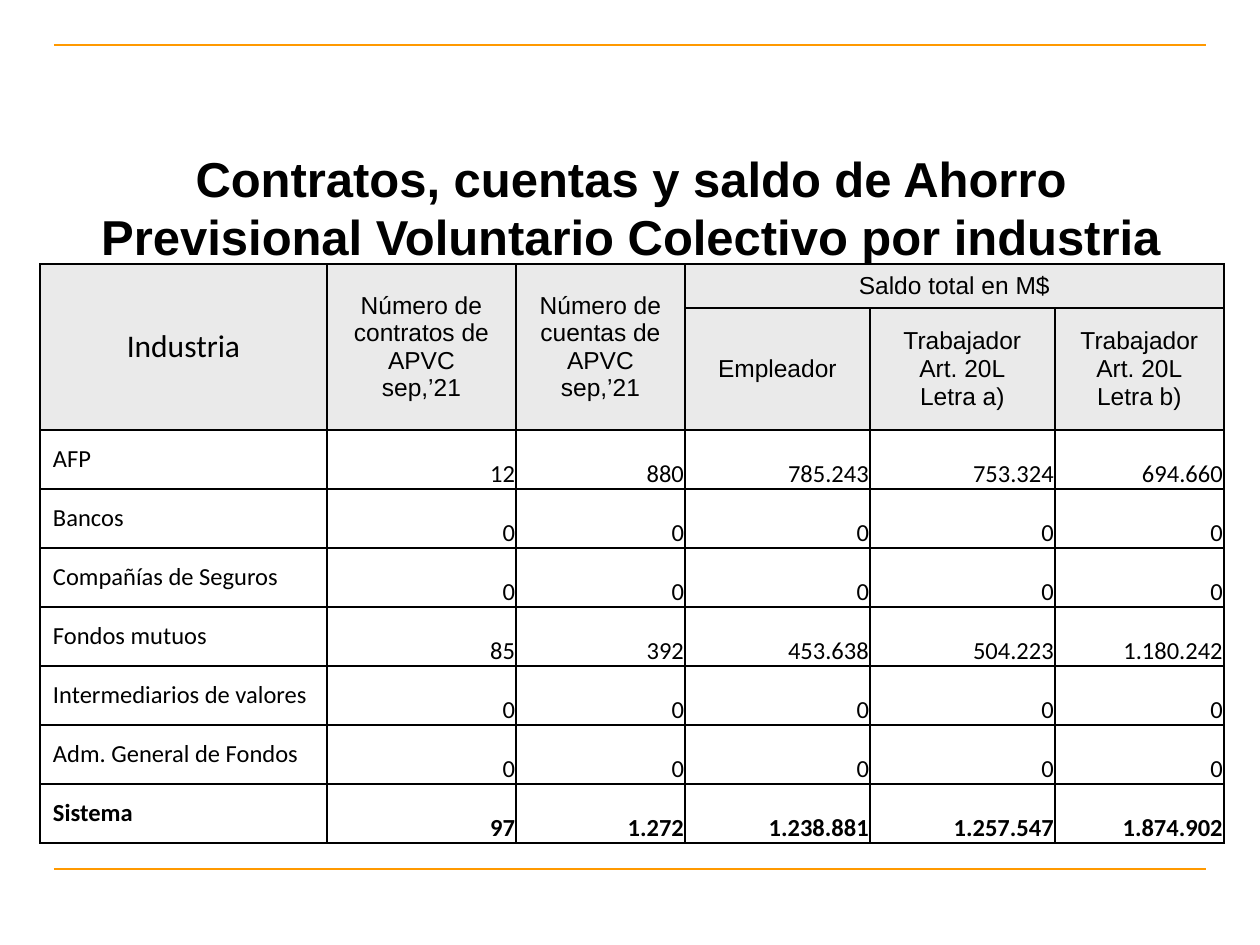
"""Builds the slide on collective pension savings by industry."""
import pptx
import pptx.util
import pptx.dml.color
import pptx.enum.shapes
import pptx.enum.text
import pptx.oxml.ns
import lxml.etree

PX = 914400 / 126
Color = pptx.dml.color.RGBColor.from_string
Align = pptx.enum.text.PP_ALIGN
Anchor = pptx.enum.text.MSO_ANCHOR
qn = pptx.oxml.ns.qn

theme = {
    "ink": "000000", "rule": "FF9900", "head": "EAEAEA", "body": "FFFFFF",
    "sans": "Arial", "text": "Calibri",
    "title": 28, "lead": 18, "cell": 14, "thin": 0.75, "edge": 1,
}


def px(*nums):
    return [pptx.util.Emu(round(n * PX)) for n in nums]


def write(frame, lines, face, size, align, bold=False):
    for i, line in enumerate(lines):
        para = frame.paragraphs[0] if i == 0 else frame.add_paragraph()
        para.alignment = align
        run = para.add_run()
        run.text = line
        run.font.name = face
        run.font.size = pptx.util.Pt(size)
        run.font.bold = bold
        run.font.color.rgb = Color(theme["ink"])


deck = pptx.Presentation()
deck.slide_width, deck.slide_height = px(1260, 945)
slide = deck.slides.add_slide(deck.slide_layouts[5])

for y in (45, 869):
    rule = slide.shapes.add_connector(
        pptx.enum.shapes.MSO_CONNECTOR.STRAIGHT, *px(54, y, 1206, y))
    rule.line.color.rgb = Color(theme["rule"])
    rule.line.width = pptx.util.Pt(theme["thin"])
    lxml.etree.SubElement(rule._element.spPr, qn("a:effectLst"))

title = slide.shapes.title
title.left, title.top, title.width, title.height = px(64, 146, 1134, 158)
frame = title.text_frame
frame.word_wrap = True
frame.auto_size = pptx.enum.text.MSO_AUTO_SIZE.NONE
frame.vertical_anchor = Anchor.MIDDLE
frame.margin_top, frame.margin_bottom = px(6, 42)
write(frame, ["Contratos, cuentas y saldo de Ahorro Previsional Voluntario "
              "Colectivo por industria"],
      theme["sans"], theme["title"], Align.CENTER, True)

cols = [287, 189, 169, 185, 185, 169]
rows = [44, 105] + [59] * 7
grid = slide.shapes.add_table(
    len(rows), len(cols), *px(40, 264, sum(cols), sum(rows))).table
grid.first_row = grid.horz_banding = False
for col, wide in zip(grid.columns, px(*cols)):
    col.width = wide
for row, high in zip(grid.rows, px(*rows)):
    row.height = high

for r in range(len(rows)):
    for c in range(len(cols)):
        cell = grid.cell(r, c)
        props = cell._tc.get_or_add_tcPr()
        for side in ("a:lnL", "a:lnR", "a:lnT", "a:lnB"):
            edge = lxml.etree.SubElement(
                props, qn(side), w=str(pptx.util.Pt(theme["edge"])))
            fill = lxml.etree.SubElement(edge, qn("a:solidFill"))
            lxml.etree.SubElement(fill, qn("a:srgbClr"), val=theme["ink"])
        cell.fill.solid()
        cell.fill.fore_color.rgb = Color(theme["head" if r < 2 else "body"])
        number = r > 1 and c > 0
        cell.vertical_anchor = Anchor.BOTTOM if number else Anchor.MIDDLE
        pads = px(1, 1, 1, 0) if number else px(13, 6, 13, 6)
        (cell.margin_left, cell.margin_top,
         cell.margin_right, cell.margin_bottom) = pads

for c in range(3):
    grid.cell(0, c).merge(grid.cell(1, c))
grid.cell(0, 3).merge(grid.cell(0, 5))

heads = [
    (0, 1, ["Número de contratos de APVC", "sep,’21"]),
    (0, 2, ["Número de cuentas de APVC", "sep,’21"]),
    (0, 3, ["Saldo total en M$"]),
    (1, 3, ["Empleador"]),
    (1, 4, ["Trabajador", "Art. 20L", "Letra a)"]),
    (1, 5, ["Trabajador", "Art. 20L", "Letra b)"]),
]
write(grid.cell(0, 0).text_frame, ["Industria"],
      theme["text"], theme["lead"], Align.CENTER)
for r, c, lines in heads:
    write(grid.cell(r, c).text_frame, lines,
          theme["sans"], theme["cell"], Align.CENTER)

none = ["0"] * 5
data = [
    ["AFP", "12", "880", "785.243", "753.324", "694.660"],
    ["Bancos", *none],
    ["Compañías de Seguros", *none],
    ["Fondos mutuos", "85", "392", "453.638", "504.223", "1.180.242"],
    ["Intermediarios de valores", *none],
    ["Adm. General de Fondos", *none],
    ["Sistema", "97", "1.272", "1.238.881", "1.257.547", "1.874.902"],
]
for r, items in enumerate(data, 2):
    for c, item in enumerate(items):
        write(grid.cell(r, c).text_frame, [item], theme["text"], theme["cell"],
              Align.RIGHT if c else Align.LEFT, items[0] == "Sistema")

deck.save("out.pptx")
